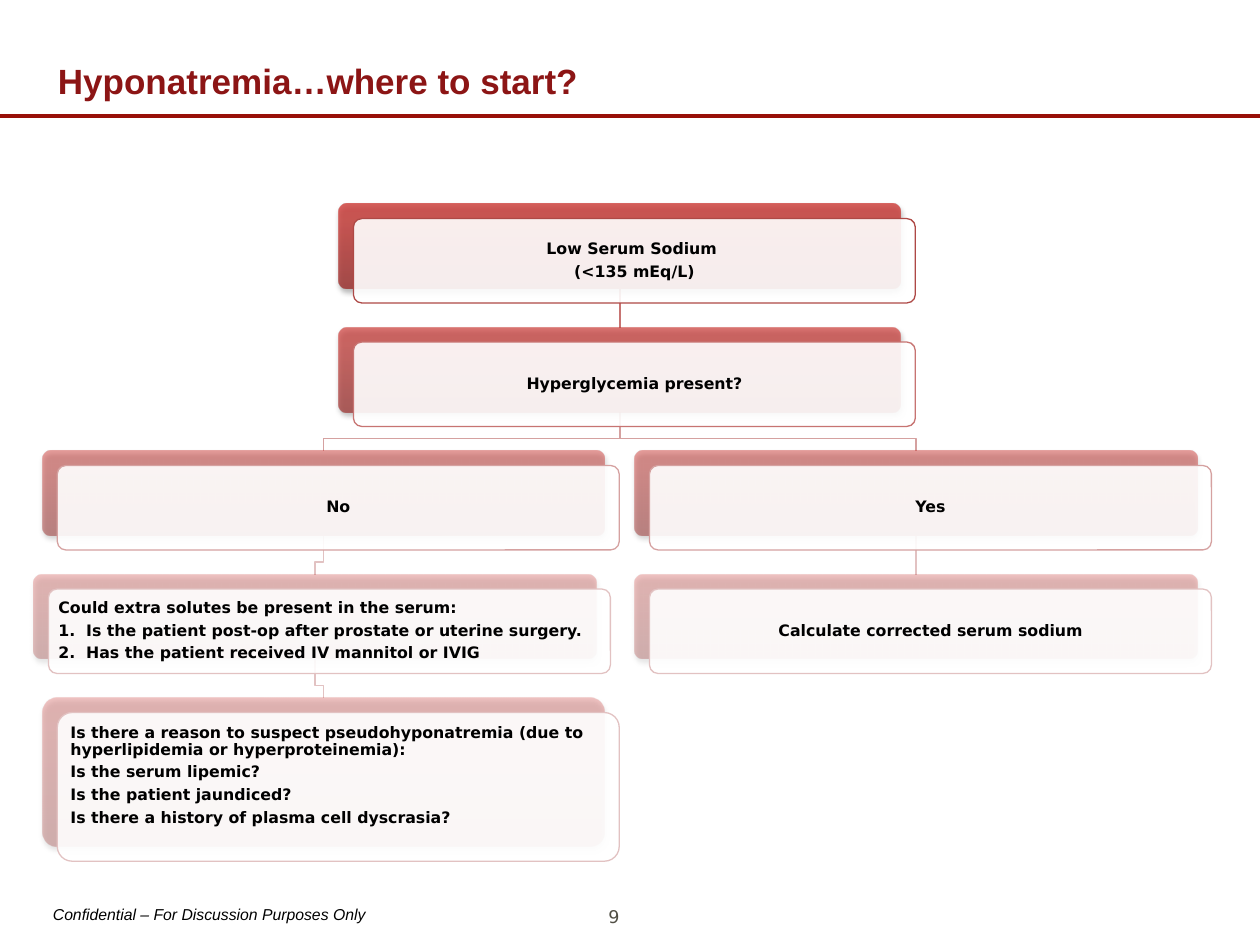
from collections import namedtuple
from lxml.etree import SubElement
from pptx import Presentation
from pptx.dml.color import RGBColor
from pptx.enum.shapes import MSO_CONNECTOR, MSO_SHAPE
from pptx.enum.text import MSO_ANCHOR, PP_ALIGN
from pptx.oxml import parse_xml
from pptx.oxml.ns import nsdecls, qn
from pptx.util import Inches, Pt

WHITE = RGBColor(0xFF, 0xFF, 0xFF)
BLACK = RGBColor(0x00, 0x00, 0x00)
TITLE_RED = RGBColor(0x8C, 0x15, 0x15)
RULE_RED = RGBColor(0x98, 0x0F, 0x08)
GREY = RGBColor(0x51, 0x4F, 0x45)
GRADIENT = [
    (0, RGBColor(0x9C, 0x2F, 0x2D)),
    (80, RGBColor(0xCB, 0x3E, 0x3A)),
    (100, RGBColor(0xCE, 0x3B, 0x37)),
]
EDGES = [
    RGBColor(0xAE, 0x49, 0x46),
    RGBColor(0xC7, 0x74, 0x72),
    RGBColor(0xD5, 0xA1, 0xA0),
    RGBColor(0xE2, 0xC2, 0xC2),
    RGBColor(0xE2, 0xC2, 0xC2),
]
OPACITY = [80, 70, 50, 30, 30]

TOP, PITCH, BOX_W, BOX_H, OFFSET = 1.62, 0.98, 4.46, 0.67, 0.115

Node = namedtuple(
    "Node", "level left lines parent height align numbered inset bottom",
    defaults=(None, BOX_H, PP_ALIGN.CENTER, False, 0.06, 0.06),
)
NODES = {
    "sodium": Node(0, 2.69, ["Low Serum Sodium ", "(<135 mEq/L)"]),
    "glucose": Node(1, 2.69, ["Hyperglycemia present?"], "sodium"),
    "no": Node(2, 0.34, ["No"], "glucose"),
    "solutes": Node(3, 0.27, [
        "Could extra solutes be present in the serum:",
        "Is the patient post-op after prostate or uterine surgery.",
        "Has the patient received IV mannitol or IVIG",
    ], "no", align=PP_ALIGN.LEFT, numbered=True),
    "pseudo": Node(4, 0.34, [
        "Is there a reason to suspect pseudohyponatremia (due to "
        "hyperlipidemia or hyperproteinemia):",
        "Is the serum lipemic?",
        "Is the patient jaundiced?",
        "Is there a history of plasma cell dyscrasia?",
    ], "solutes", 1.18, PP_ALIGN.LEFT, inset=0.07, bottom=0.24),
    "yes": Node(2, 5.04, ["Yes"], "glucose"),
    "correct": Node(3, 5.04, ["Calculate corrected serum sodium"], "yes"),
}


def set_attrs(obj, **fmt):
    """Set each format value on the object."""
    for name, value in fmt.items():
        setattr(obj, name, value)


def set_insets(tf, left=0, top=0, right=0, bottom=0):
    """Set the text margins in inches."""
    set_attrs(tf, margin_left=Inches(left), margin_top=Inches(top),
              margin_right=Inches(right), margin_bottom=Inches(bottom))


def add_run(p, text, color, **fmt):
    """Add a formatted run to a paragraph."""
    r = p.add_run()
    r.text = text
    set_attrs(r.font, **fmt)
    r.font.color.rgb = color


def style_line(shape, color, width):
    """Colour a line and drop its shadow."""
    shape.line.color.rgb = color
    shape.line.width = Pt(width)
    SubElement(shape._element.spPr, qn("a:effectLst"))


def add_line(s, x1, y1, x2, y2, color, width):
    """Draw a straight line."""
    line = s.shapes.add_connector(
        MSO_CONNECTOR.STRAIGHT, Inches(x1), Inches(y1), Inches(x2), Inches(y2))
    style_line(line, color, width)


def add_link(s, parent, child):
    """Join a parent box to its child, bending just above the child."""
    x1, x2 = parent.left + BOX_W / 2, child.left + BOX_W / 2
    y1 = TOP + PITCH * parent.level + parent.height
    y2 = TOP + PITCH * child.level
    color = EDGES[child.level]
    if x1 == x2:
        add_line(s, x1, y1, x2, y2, color, 0.75)
        return
    bend = y2 - 0.1
    points = [(Inches(x), Inches(y)) for x, y in ((x1, bend), (x2, bend), (x2, y2))]
    fb = s.shapes.build_freeform(Inches(x1), Inches(y1))
    fb.add_line_segments(points, close=False)
    elbow = fb.convert_to_shape()
    elbow.fill.background()
    style_line(elbow, color, 0.75)


def add_round_rect(s, left, top, height):
    """Add a rounded box of the common width."""
    sp = s.shapes.add_shape(MSO_SHAPE.ROUNDED_RECTANGLE, Inches(left),
                            Inches(top), Inches(BOX_W), Inches(height))
    sp.adjustments[0] = 0.1
    sp.shadow.inherit = False
    return sp


def add_back(s, node, top):
    """Add the shaded box with its gradient and shadow."""
    sp = add_round_rect(s, node.left, top, node.height)
    sp.line.fill.background()
    stops = "".join(
        f'<a:gs pos="{pos * 1000}"><a:srgbClr val="{color}">'
        f'<a:alpha val="{OPACITY[node.level] * 1000}"/></a:srgbClr></a:gs>'
        for pos, color in GRADIENT)
    grad = parse_xml(f'<a:gradFill {nsdecls("a")} rotWithShape="1"><a:gsLst>{stops}'
                     '</a:gsLst><a:lin ang="16200000" scaled="0"/></a:gradFill>')
    spPr = sp._element.spPr
    spPr.find(qn("a:prstGeom")).addnext(grad)
    shadow = SubElement(spPr.find(qn("a:effectLst")), qn("a:outerShdw"),
                        blurRad=str(Pt(3.1)), dist=str(Pt(1.8)),
                        dir="5400000", rotWithShape="0")
    color = SubElement(shadow, qn("a:srgbClr"), val=str(BLACK))
    SubElement(color, qn("a:alpha"), val="35000")


def add_front(s, node, top):
    """Add the translucent white box with the text."""
    sp = add_round_rect(s, node.left + OFFSET, top + OFFSET, node.height)
    sp.fill.solid()
    sp.fill.fore_color.rgb = WHITE
    color = sp._element.spPr.find(qn("a:solidFill"))[0]
    SubElement(color, qn("a:alpha"), val="90000")
    set_attrs(sp.line, width=Pt(0.75))
    sp.line.color.rgb = EDGES[node.level]
    tf = sp.text_frame
    set_attrs(tf, word_wrap=True, vertical_anchor=MSO_ANCHOR.MIDDLE)
    set_insets(tf, node.inset, 0.06, node.inset, node.bottom)
    for i, text in enumerate(node.lines):
        p = tf.add_paragraph() if i else tf.paragraphs[0]
        set_attrs(p, alignment=node.align, line_spacing=0.9, space_after=Pt(3.15))
        if node.numbered and i:
            pPr = p._p.get_or_add_pPr()
            pPr.set("marL", str(Inches(0.22)))
            pPr.set("indent", str(-Inches(0.22)))
            SubElement(pPr, qn("a:buAutoNum"), type="arabicPeriod")
        add_run(p, text, BLACK, name="DejaVu Sans", size=Pt(9), bold=True)


def add_title(s, text):
    """Place and format the title placeholder."""
    sp = s.shapes.title
    set_attrs(sp, left=Inches(0.46), top=Inches(0.23),
              width=Inches(9.16), height=Inches(0.58))
    tf = sp.text_frame
    set_attrs(tf, word_wrap=True, vertical_anchor=MSO_ANCHOR.BOTTOM)
    set_insets(tf)
    p = tf.paragraphs[0]
    set_attrs(p, alignment=PP_ALIGN.LEFT, line_spacing=1.05)
    add_run(p, text, TITLE_RED, name="Arial", size=Pt(20), bold=True)


def add_label(s, box, text, color, align, wrap, **fmt):
    """Add a one-line text box."""
    tf = s.shapes.add_textbox(*map(Inches, box)).text_frame
    tf.word_wrap = wrap
    if not wrap:
        set_insets(tf)
    p = tf.paragraphs[0]
    p.alignment = align
    add_run(p, text, color, **fmt)


def main():
    """Build the slide and save it."""
    prs = Presentation()
    set_attrs(prs, slide_width=Inches(10), slide_height=Inches(7.5))
    s = prs.slides.add_slide(prs.slide_layouts[5])
    add_line(s, 0, 0.92, 10, 0.92, RULE_RED, 2.25)
    add_title(s, "Hyponatremia…where to start?")
    add_label(s, (0.42, 7.18, 2.5, 0.15), "Confidential – For Discussion Purposes Only",
              BLACK, PP_ALIGN.LEFT, False, name="Arial", size=Pt(9), italic=True)
    add_label(s, (4.33, 7.14, 1.13, 0.19), "9 ", GREY, PP_ALIGN.CENTER, True,
              name="DejaVu Sans", size=Pt(10))
    for node in NODES.values():
        if node.parent:
            add_link(s, NODES[node.parent], node)
    for node in NODES.values():
        top = TOP + PITCH * node.level
        add_back(s, node, top)
        add_front(s, node, top)
    prs.save("out.pptx")


if __name__ == "__main__":
    main()
